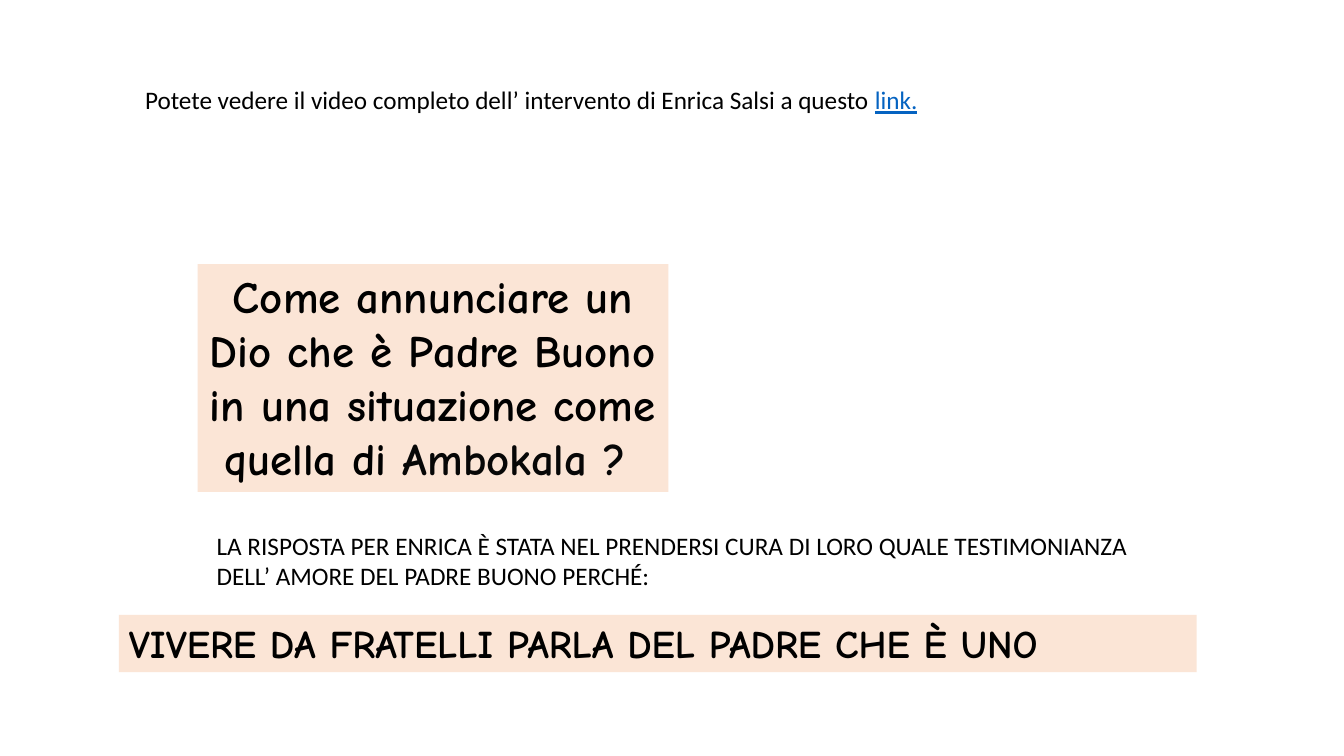
"""Build the closing slide on Enrica's talk."""
from pptx import Presentation
from pptx.dml.color import RGBColor
from pptx.enum.shapes import MSO_SHAPE
from pptx.enum.text import MSO_ANCHOR, MSO_AUTO_SIZE, PP_ALIGN
from pptx.util import Inches, Pt

WIDE, HIGH = Inches(13.33), Inches(7.5)
COLORS = {"peach": "FBE5D6", "black": "000000", "soft": "070707", "link": "0563C1"}


def color(name):
    """Return the named colour."""
    return RGBColor.from_string(COLORS[name])


def place(left, top, width, height):
    """Turn percentages of the slide into lengths."""
    sides = (WIDE, HIGH, WIDE, HIGH)
    return [round(side * part / 100) for side, part in zip(sides, (left, top, width, height))]


def write(shape, paras, face, size, bold=False, align=PP_ALIGN.LEFT):
    """Fill a shape with paragraphs of (text, colour) runs."""
    frame = shape.text_frame
    frame.word_wrap = True
    frame.auto_size = MSO_AUTO_SIZE.SHAPE_TO_FIT_TEXT
    frame.vertical_anchor = MSO_ANCHOR.TOP
    for index, parts in enumerate(paras):
        para = frame.paragraphs[0] if index == 0 else frame.add_paragraph()
        para.alignment = align
        font = para.font
        font.name, font.size, font.bold = face, Pt(size), bold
        for text, tint in parts:
            run = para.add_run()
            run.text = text
            run.font.color.rgb = color(tint)
            if tint == "link":
                run.font.underline = True


def panel(slide, area, paras, size, align=PP_ALIGN.LEFT):
    """Add a peach panel with bold text."""
    shape = slide.shapes.add_shape(MSO_SHAPE.RECTANGLE, *place(*area))
    shape.shadow.inherit = False
    shape.fill.solid()
    shape.fill.fore_color.rgb = color("peach")
    shape.line.fill.background()
    write(shape, paras, "Comic Neue", size, True, align)


def note(slide, area, parts):
    """Add a plain line of text."""
    write(slide.shapes.add_textbox(*place(*area)), [parts], "Calibri", 18)


def main():
    """Build and save the slide."""
    deck = Presentation()
    deck.slide_width, deck.slide_height = WIDE, HIGH
    slide = deck.slides.add_slide(deck.slide_layouts[6])
    panel(slide, (14.7, 34.93, 35.03, 30.13), [
        [("Come annunciare un Dio che è Padre Buono ", "black")],
        [("in una situazione come quella di ", "black"), ("Ambokala ? ", "soft")],
    ], 32, PP_ALIGN.CENTER)
    note(slide, (10.05, 10.53, 83.8, 5.33), [
        ("Potete vedere il video completo dell’ intervento di Enrica Salsi a questo ", "black"),
        ("link.", "link"),
    ])
    panel(slide, (8.85, 81.33, 80.2, 7.6),
          [[("VIVERE DA FRATELLI PARLA DEL PADRE CHE È UNO", "black")]], 28)
    note(slide, (15.38, 69.47, 72.47, 9.47), [
        ("LA RISPOSTA PER ENRICA È STATA NEL PRENDERSI CURA DI LORO QUALE TESTIMONIANZA "
         "DELL’ AMORE DEL PADRE BUONO PERCHÉ:", "black"),
    ])
    deck.save("out.pptx")


if __name__ == "__main__":
    main()
